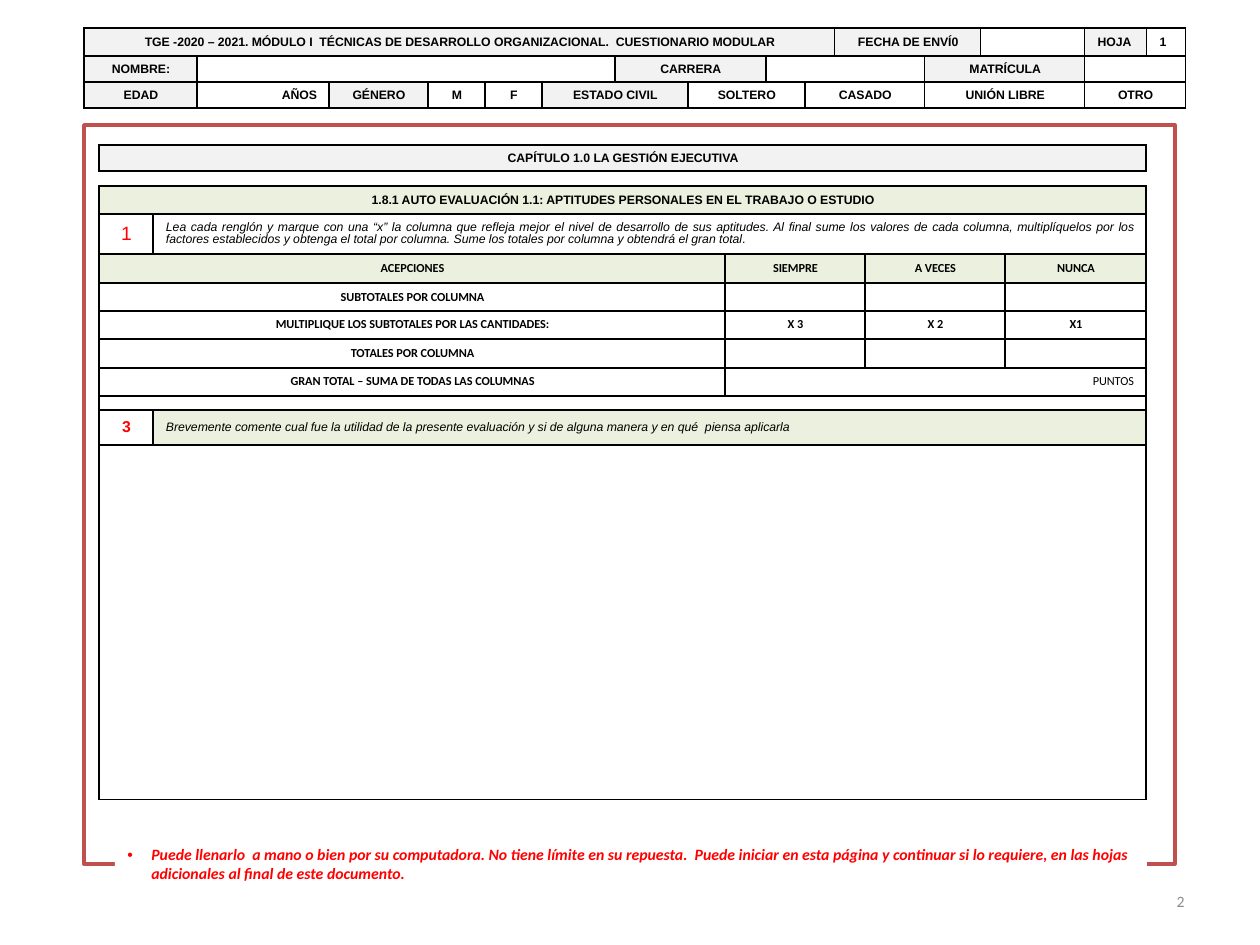
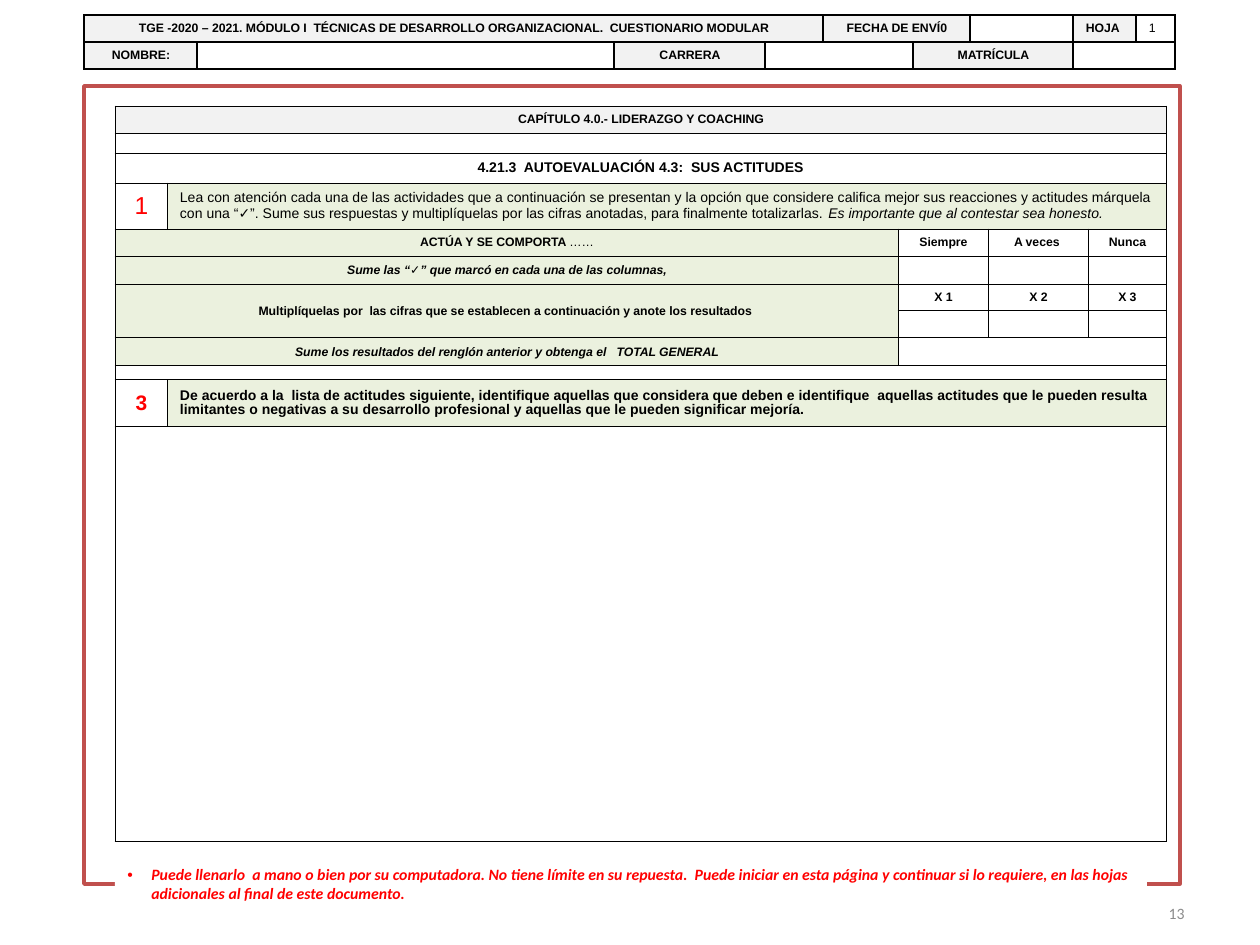
from dataclasses import dataclass
from lxml import etree
from pptx import Presentation
from pptx.dml import color as tint
from pptx.enum import shapes, text
from pptx.oxml import ns
from pptx.util import Emu, Pt

SCALE = 914400 / 126
BLACK, WHITE, RED = "000000", "FFFFFF", "FF0000"
GRAY, GREEN, BRICK, DIM = "F2F2F2", "EBF1DE", "C0504D", "8C8C8C"
LEFT, MID, RIGHT, JUST = (text.PP_ALIGN.LEFT, text.PP_ALIGN.CENTER,
                          text.PP_ALIGN.RIGHT, text.PP_ALIGN.JUSTIFY)
NOTE = ("Puede llenarlo  a mano o bien por su computadora. No tiene límite en su repuesta.  "
        "Puede iniciar en esta página y continuar si lo requiere, en las hojas adicionales "
        "al final de este documento.")


@dataclass
class Cell:
    """Content and look of one table cell; down=0 marks a covered place."""
    words: str = ""
    span: int = 1
    fill: str = WHITE
    align: int = MID
    size: int = 7
    face: str = "Arial"
    bold: bool = True
    ital: bool = False
    color: str = BLACK
    line: float = 1.0
    down: int = 1
    sides: str = "LRTB"
    tail: tuple = ()


def px(count):
    """Turn px into EMU."""
    return Emu(round(count * SCALE))


def rgb(code):
    """Turn a hex string into a colour."""
    return tint.RGBColor.from_string(code)


def write(para, words, size, face, color, bold=False, ital=False):
    """Add one run to a paragraph."""
    run = para.add_run()
    run.text = words
    font = run.font
    font.size, font.name, font.bold, font.italic = Pt(size), face, bold, ital
    font.color.rgb = rgb(color)


def edge(cell, sides, width):
    """Draw black borders on the named sides of a cell."""
    props = cell._tc.get_or_add_tcPr()
    for side in "LRTB":
        line = etree.SubElement(props, ns.qn("a:ln" + side), w=str(Pt(width)))
        if side in sides:
            fill = etree.SubElement(line, ns.qn("a:solidFill"))
            etree.SubElement(fill, ns.qn("a:srgbClr"), val=BLACK)
        else:
            etree.SubElement(line, ns.qn("a:noFill"))


def dress(cell, item, width):
    """Give a cell its borders, fill, margins and an empty small line."""
    edge(cell, item.sides, width)
    cell.fill.solid()
    cell.fill.fore_color.rgb = rgb(item.fill)
    cell.margin_left, cell.margin_right = px(13), px(12)
    cell.margin_top = cell.margin_bottom = px(5)
    cell.vertical_anchor = text.MSO_ANCHOR.MIDDLE
    if not item.words:
        para = cell.text_frame.paragraphs[0]
        etree.SubElement(para._p, ns.qn("a:endParaRPr"), sz="100")


def fill_in(cell, item):
    """Write the text of a cell."""
    para = cell.text_frame.paragraphs[0]
    para.alignment, para.line_spacing = item.align, item.line
    write(para, item.words, item.size, item.face, item.color, item.bold, item.ital)
    if item.tail:
        words, bold, ital = item.tail
        write(para, words, item.size, item.face, item.color, bold, ital)


def grid(slide, left, top, cols, highs, rows, width):
    """Build a table from column widths, row heights and rows of cells."""
    frame = slide.shapes.add_table(len(highs), len(cols), px(left), px(top),
                                   px(sum(cols)), px(sum(highs)))
    table = frame.table
    table.first_row = table.horz_banding = False
    for col, wide in zip(table.columns, cols):
        col.width = px(wide)
    for row, high in zip(table.rows, highs):
        row.height = px(high)
    for y, row in enumerate(rows):
        x = 0
        for item in row:
            first = table.cell(y, x)
            for dy in range(item.down):
                for dx in range(item.span):
                    hidden = Cell(fill=item.fill, sides=item.sides)
                    dress(table.cell(y + dy, x + dx), hidden if dx or dy else item, width)
            if item.down * item.span > 1:
                first.merge(table.cell(y + item.down - 1, x + item.span - 1))
            if item.words:
                fill_in(first, item)
            x += item.span


def head(title, name, job, mark, bold):
    """Return the two rows that open every sheet."""
    return [
        [Cell("TGE -2020 – 2021. MÓDULO I  TÉCNICAS DE DESARROLLO ORGANIZACIONAL."
              "  CUESTIONARIO MODULAR", title, GRAY),
         Cell("FECHA DE ENVÍ0", 2, GRAY), Cell(), Cell("HOJA", 1, GRAY, LEFT),
         Cell("1", align=LEFT, bold=bold)],
        [Cell("NOMBRE:", 1, GRAY), Cell(span=name), Cell("CARRERA", job, GRAY),
         Cell(span=mark), Cell("MATRÍCULA", 2, GRAY), Cell(span=2)],
    ]


def task(mark, size, bold, body):
    """Return a row with a red number and an instruction."""
    return [Cell(mark, size=size, bold=bold, color=RED), body]


def box(slide, left, top, wide, high, fill=None, line=None):
    """Add a plain rectangle."""
    shape = slide.shapes.add_shape(shapes.MSO_SHAPE.RECTANGLE,
                                   px(left), px(top), px(wide), px(high))
    shape.shadow.inherit = False
    if fill:
        shape.fill.solid()
        shape.fill.fore_color.rgb = rgb(fill)
    else:
        shape.fill.background()
    if line:
        shape.line.color.rgb = rgb(line)
        shape.line.width = Pt(2)
    else:
        shape.line.fill.background()
    return shape


def foot(slide, top, page, drop):
    """Place the bulleted note and the page number."""
    frame = box(slide, 115, top, 1032, 30, WHITE).text_frame
    frame.word_wrap = True
    frame.vertical_anchor = text.MSO_ANCHOR.MIDDLE
    para = frame.paragraphs[0]
    para.alignment = LEFT
    props = para._p.get_or_add_pPr()
    props.set("marL", str(px(24)))
    props.set("indent", str(px(-24)))
    etree.SubElement(props, ns.qn("a:buFont"), typeface="Arial")
    etree.SubElement(props, ns.qn("a:buChar"), char="•")
    write(para, NOTE, 9, "Calibri", RED, True, True)
    label = slide.shapes.add_textbox(px(903), px(top + drop), px(294), px(50)).text_frame
    label.word_wrap = True
    label.vertical_anchor = text.MSO_ANCHOR.MIDDLE
    label.paragraphs[0].alignment = RIGHT
    write(label.paragraphs[0], page, 9, "Calibri", DIM)


def skills(slide):
    """Build the sheet on personal skills."""
    rows = head(10, 5, 2, 3, True) + [[
        Cell("EDAD", 1, GRAY), Cell("AÑOS", align=RIGHT), Cell("GÉNERO", 1, GRAY),
        Cell("M"), Cell("F"), Cell("ESTADO CIVIL", 2, GRAY), Cell("SOLTERO", 2),
        Cell("CASADO", 2), Cell("UNIÓN LIBRE", 2), Cell("OTRO", 2)]]
    cols = [113, 132, 99, 57, 57, 73, 73, 78, 39, 29, 90, 56, 104, 62, 39]
    grid(slide, 84, 28, cols, [28, 26, 26], rows, 1)

    def score(title, marks, fill=WHITE):
        """Return a row with a title and three marks."""
        return [Cell(title, 2, fill, face="Calibri")] + [
            Cell(mark, fill=fill, face="Calibri") for mark in marks]

    blank = [""] * 3
    rows = [
        [Cell("CAPÍTULO 1.0 LA GESTIÓN EJECUTIVA", 5, GRAY)],
        [Cell(span=5, sides="TB")],
        [Cell("1.8.1 AUTO EVALUACIÓN 1.1: APTITUDES PERSONALES EN EL TRABAJO O ESTUDIO",
              5, GREEN)],
        task("1", 11, False, Cell(
            "Lea cada renglón y marque con una “x” la columna que refleja mejor el nivel de "
            "desarrollo de sus aptitudes. Al final sume los valores de cada columna, "
            "multiplíquelos por los factores establecidos y obtenga el total por columna. "
            "Sume los totales por columna y obtendrá el gran total",
            4, align=JUST, bold=False, ital=True, line=0.9, tail=(".", False, False))),
        score("ACEPCIONES", ["SIEMPRE", "A VECES", "NUNCA"], GREEN),
        score("SUBTOTALES POR COLUMNA", blank),
        score("MULTIPLIQUE LOS SUBTOTALES POR LAS CANTIDADES:", ["X 3", "X 2", "X1"]),
        score("TOTALES POR COLUMNA", blank),
        [Cell("GRAN TOTAL – SUMA DE TODAS LAS COLUMNAS", 2, face="Calibri"),
         Cell("PUNTOS", 3, align=RIGHT, face="Calibri", bold=False)],
        [Cell(span=5)],
        task("3", 9, True, Cell(
            "Brevemente comente cual fue la utilidad de la presente evaluación y si de "
            "alguna manera y en qué  piensa aplicarla",
            4, GREEN, JUST, bold=False, ital=True)),
        [Cell(span=5)],
    ]
    highs = [26, 15, 28, 40, 29, 28, 28, 29, 28, 14, 35, 355]
    grid(slide, 99, 145, [54, 572, 140, 140, 141], highs, rows, 1)
    box(slide, 84, 125, 1091, 739, line=BRICK)
    foot(slide, 849, "2", 27)


def moods(slide):
    """Build the sheet on attitudes."""
    box(slide, 84, 86, 1096, 798, line=BRICK)
    cols = [113, 417, 151, 58, 90, 57, 103, 63, 39]
    grid(slide, 84, 15, cols, [27, 27], head(4, 1, 1, 2, False), 1)
    rows = [
        [Cell("CAPÍTULO 4.0.- LIDERAZGO Y COACHING", 5, GRAY)],
        [Cell(span=5)],
        [Cell("4.21.3  AUTOEVALUACIÓN 4.3:  SUS ACTITUDES", 5, size=8)],
        task("1", 14, False, Cell(
            "Lea con atención cada una de las actividades que a continuación se presentan y la "
            "opción que considere califica mejor sus reacciones y actitudes márquela con una "
            "“✓”. Sume sus respuestas y multiplíquelas por las cifras anotadas, para "
            "finalmente totalizarlas. ", 4, GREEN, LEFT, 8, bold=False,
            tail=("Es importante que al contestar sea honesto.", False, True))),
        [Cell("ACTÚA Y SE COMPORTA ", 2, GREEN, tail=("……", False, False)),
         Cell("Siempre"), Cell("A veces "), Cell("Nunca")],
        [Cell("Sume las “✓” que marcó en cada una de las columnas,", 2, GREEN, ital=True),
         Cell(), Cell(), Cell()],
        [Cell("Multiplíquelas por  las cifras que se establecen a continuación y anote "
              "los resultados ", 2, GREEN, down=2), Cell("X 1"), Cell("X 2"), Cell("X 3")],
        [Cell(span=2, down=0), Cell(), Cell(), Cell()],
        [Cell("Sume los resultados del renglón anterior y obtenga el   TOTAL GENERAL",
              2, GREEN, ital=True), Cell(span=3)],
        [Cell(span=5)],
        task("3", 12, True, Cell(
            "De acuerdo a la  lista de actitudes siguiente, identifique aquellas que considera "
            "que deben e identifique  aquellas actitudes que le pueden resulta  limitantes o "
            "negativas a su desarrollo profesional y aquellas que le pueden significar mejoría.",
            4, GREEN, LEFT, 8, line=0.9)),
        [Cell(span=5)],
    ]
    highs = [27, 20, 30, 46, 27, 28, 27, 27, 28, 14, 47, 415]
    grid(slide, 115, 106, [52, 731, 90, 100, 78], highs, rows, 0.5)
    foot(slide, 869, "13", 19)


def main():
    """Make the two sheets and save them."""
    deck = Presentation()
    deck.slide_width, deck.slide_height = px(1260), px(945)
    for build in (skills, moods):
        build(deck.slides.add_slide(deck.slide_layouts[6]))
    deck.save("out.pptx")


if __name__ == "__main__":
    main()
